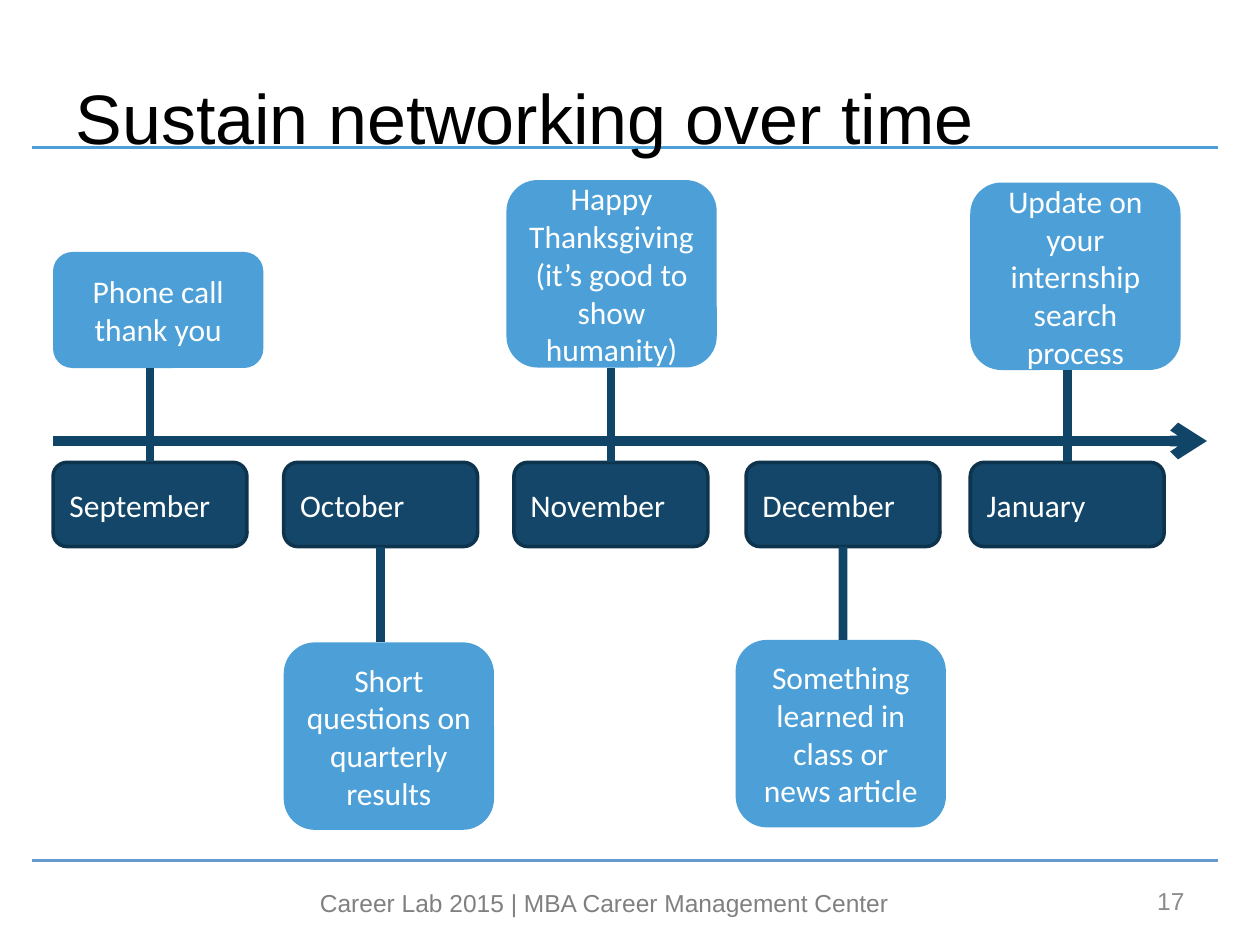
from lxml import etree
from pptx import Presentation
from pptx.dml.color import RGBColor
from pptx.enum.shapes import MSO_CONNECTOR, MSO_SHAPE
from pptx.enum.text import MSO_ANCHOR, MSO_AUTO_SIZE, PP_ALIGN
from pptx.oxml.ns import qn
from pptx.util import Cm, Pt

STRAIGHT = MSO_CONNECTOR.STRAIGHT
ROUNDED = MSO_SHAPE.ROUNDED_RECTANGLE
LEFT, CENTER, RIGHT = PP_ALIGN.LEFT, PP_ALIGN.CENTER, PP_ALIGN.RIGHT
TOP, MIDDLE = MSO_ANCHOR.TOP, MSO_ANCHOR.MIDDLE
TOP_SITE, BOTTOM_SITE = 0, 2

NAVY, NAVY_EDGE, STEM, SKY = "134668", "0E344D", "114568", "4DA0D7"
WHITE = "FFFFFF"

TITLE = "Sustain networking over time"
FOOTER = "Career Lab 2015 | MBA Career Management Center"
PAGE_NUMBER = "17"

MONTH_TOP, MONTH_WIDTH, MONTH_HEIGHT = 9.32, 3.91, 1.7
NOTE_WIDTH = 4.24
RULES = [(17.35, "6699CC"), (2.97, SKY)]

# month, month left, note, note left, note top, note height
MILESTONES = [
    ("September", 1.07, "Phone call thank you", 1.07, 5.08, 2.34),
    ("October", 5.72, "Short questions on quarterly results", 5.72, 12.95, 3.78),
    ("November", 10.36, "Happy Thanksgiving (it’s good to show humanity)", 10.21, 3.63, 3.78),
    ("December", 15.04, "Something learned in class or news article", 14.83, 12.9, 3.78),
    ("January", 19.56, "Update on your internship search process", 19.56, 3.68, 3.78),
]


def color(value):
    return RGBColor.from_string(value)


def write(shape, text, size, font_name, font_color, alignment, anchor=MIDDLE):
    frame = shape.text_frame
    frame.text = text
    frame.word_wrap = True
    frame.auto_size = MSO_AUTO_SIZE.NONE
    frame.vertical_anchor = anchor
    paragraph = frame.paragraphs[0]
    paragraph.alignment = alignment
    font_format = {"size": Pt(size), "name": font_name}
    for name, value in font_format.items():
        setattr(paragraph.font, name, value)
    paragraph.font.color.rgb = color(font_color)


def add_line(slide, start, end, line_color, width):
    line = slide.shapes.add_connector(STRAIGHT, *map(Cm, start + end))
    line.line.color.rgb = color(line_color)
    line.line.width = Pt(width)
    etree.SubElement(line._element.spPr, qn("a:effectLst"))
    return line


def add_box(slide, box, text, fill, edge, alignment):
    shape = slide.shapes.add_shape(ROUNDED, *map(Cm, box))
    shape.shadow.inherit = False
    shape.fill.solid()
    shape.fill.fore_color.rgb = color(fill)
    if edge:
        shape.line.color.rgb = color(edge)
        shape.line.width = Pt(2)
    else:
        shape.line.fill.background()
    write(shape, text, 18, "Calibri", WHITE, alignment)
    return shape


def add_milestone(slide, month, month_left, note, note_left, note_top, note_height):
    month_box = add_box(slide, (month_left, MONTH_TOP, MONTH_WIDTH, MONTH_HEIGHT),
                        month, NAVY, NAVY_EDGE, LEFT)
    add_box(slide, (note_left, note_top, NOTE_WIDTH, note_height), note, SKY, None, CENTER)
    middle = month_left + MONTH_WIDTH / 2
    if note_top < MONTH_TOP:
        site, start, end = TOP_SITE, MONTH_TOP, note_top + note_height
    else:
        site, start, end = BOTTOM_SITE, MONTH_TOP + MONTH_HEIGHT, note_top
    stem = add_line(slide, (middle, start), (middle, end), STEM, 5)
    stem.begin_connect(month_box, site)


def main():
    presentation = Presentation()
    presentation.slide_width, presentation.slide_height = Cm(25.4), Cm(19.05)
    slide = presentation.slides.add_slide(presentation.slide_layouts[5])

    for height, rule_color in RULES:
        add_line(slide, (0.64, height), (24.56, height), rule_color, 2)

    title = slide.shapes.title
    place = {"left": 1.27, "top": 0.76, "width": 22.86, "height": 3.18}
    for name, value in place.items():
        setattr(title, name, Cm(value))
    write(title, TITLE, 40, "Arial", "000000", LEFT)
    slide.shapes._spTree.append(title._element)

    footer = slide.shapes.add_textbox(Cm(6.15), Cm(17.78), Cm(12.07), Cm(0.86))
    write(footer, FOOTER, 14, "Arial", "808080", CENTER, TOP)
    number = slide.shapes.add_textbox(Cm(18.21), Cm(17.65), Cm(5.92), Cm(1.02))
    write(number, PAGE_NUMBER, 14, "Arial", "8C8C8C", RIGHT)

    timeline = add_line(slide, (1.07, 8.89), (24.33, 8.89), STEM, 6)
    etree.SubElement(timeline.line._get_or_add_ln(), qn("a:tailEnd"), type="arrow")

    for milestone in MILESTONES:
        add_milestone(slide, *milestone)

    presentation.save("out.pptx")


if __name__ == "__main__":
    main()
